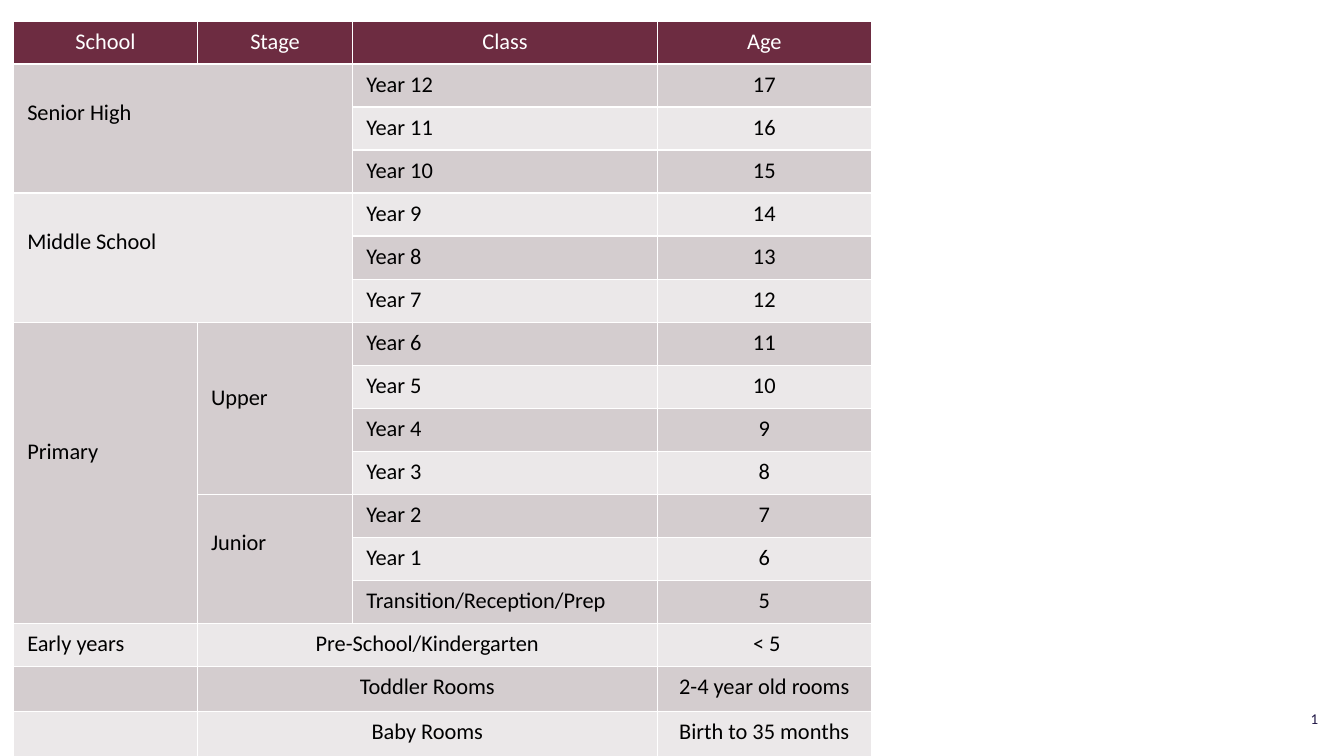
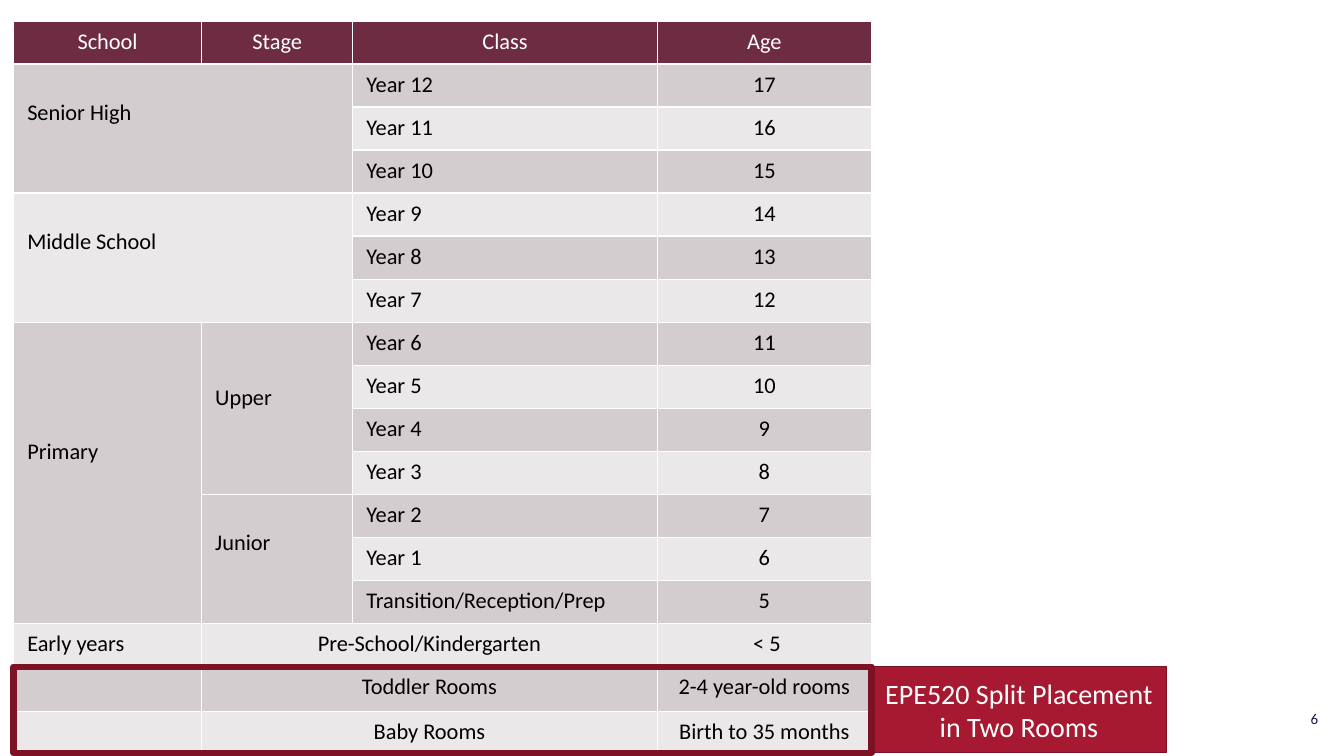
from dataclasses import dataclass

from pptx import Presentation
from pptx import util as u
from pptx.dml.color import RGBColor
from pptx.enum import shapes, text

EMU_PER_PX = 9525
FONT = "Calibri"
WHITE = RGBColor(0xFF, 0xFF, 0xFF)
BLACK = RGBColor(0x00, 0x00, 0x00)
PLUM = RGBColor(0x6D, 0x2C, 0x41)
BAND_DARK = RGBColor(0xD4, 0xCD, 0xCF)
BAND_LIGHT = RGBColor(0xEB, 0xE8, 0xE9)
CRIMSON = RGBColor(0xA7, 0x19, 0x30)
DARK_RED = RGBColor(0x7C, 0x12, 0x24)
NAVY = RGBColor(0x20, 0x16, 0x45)

LEFT, CENTER, RIGHT = text.PP_ALIGN.LEFT, text.PP_ALIGN.CENTER, text.PP_ALIGN.RIGHT

TABLE_X, TABLE_Y = 13, 20
ROW_H = 41
LINE_H = 26
INSET_X, INSET_Y = 13, 7
HEADERS = ("School", "Stage", "Class", "Age")
CLASSES = [f"Year {n}" for n in range(12, 0, -1)] + ["Transition/Reception/Prep"]
OLDEST = 17


@dataclass(frozen=True)
class Group:
    """A label spanning rows and columns, set some text lines below its top."""
    label: str
    row: int
    col: int
    rows: int = 1
    cols: int = 1
    lines_down: int = 0
    align: text.PP_ALIGN = LEFT


@dataclass(frozen=True)
class Page:
    number: str
    school_w: int
    stage_w: int
    toddler_age: str
    callout: str = ""


GROUPS = (
    Group("Senior High", 1, 0, rows=3, cols=2, lines_down=1),
    Group("Middle School", 4, 0, rows=3, cols=2, lines_down=1),
    Group("Primary", 7, 0, rows=7, lines_down=4),
    Group("Upper", 7, 1, rows=4, lines_down=2),
    Group("Junior", 11, 1, rows=3, lines_down=1),
    Group("Early years", 14, 0),
    Group("Pre-School/Kindergarten", 14, 1, cols=2, align=CENTER),
    Group("Toddler Rooms", 15, 1, cols=2, align=CENTER),
    Group("Baby Rooms", 16, 1, cols=2, align=CENTER),
)
PAGES = (
    Page("1", 175, 148, "2-4 year old rooms"),
    Page("6", 179, 144, "2-4 year-old rooms", "EPE520 Split Placement in Two Rooms"),
)
CLASS_W, AGE_W = 290, 204
TABLE_W = PAGES[0].school_w + PAGES[0].stage_w + CLASS_W + AGE_W


def px(n: int) -> u.Emu:
    return u.Emu(n * EMU_PER_PX)


def write(tf, words: str, *, size: float = 16, color: RGBColor = BLACK,
          align: text.PP_ALIGN = LEFT) -> None:
    p = tf.paragraphs[0]
    p.alignment = align
    r = p.add_run()
    r.text = words
    r.font.name, r.font.size, r.font.bold = FONT, u.Pt(size), False
    r.font.color.rgb = color


def set_insets(target, lines_down: int = 0) -> None:
    target.margin_left = target.margin_right = px(INSET_X)
    target.margin_top = px(INSET_Y + lines_down * LINE_H)
    target.margin_bottom = px(INSET_Y)


def add_box(slide, x: int, y: int, w: int, h: int, *, line_pt: float,
            fill: RGBColor | None = None):
    sp = slide.shapes.add_shape(shapes.MSO_SHAPE.RECTANGLE, px(x), px(y), px(w), px(h))
    sp.shadow.inherit = False
    if fill is None:
        sp.fill.background()
    else:
        sp.fill.solid()
        sp.fill.fore_color.rgb = fill
    sp.line.color.rgb, sp.line.width = DARK_RED, u.Pt(line_pt)
    return sp


def add_page_number(slide, number: str) -> None:
    tf = slide.shapes.add_textbox(px(1216), px(665), px(49), px(38)).text_frame
    tf.word_wrap = True
    tf.vertical_anchor = text.MSO_ANCHOR.MIDDLE
    write(tf, number, size=10.7, color=NAVY, align=RIGHT)


def add_school_table(slide, page: Page) -> None:
    ages = [str(OLDEST - i) for i in range(len(CLASSES))]
    ages += [" < 5", page.toddler_age, "Birth to 35 months"]
    n_rows = len(ages) + 1
    widths = (page.school_w, page.stage_w, CLASS_W, AGE_W)
    table = slide.shapes.add_table(n_rows, len(widths), px(TABLE_X), px(TABLE_Y),
                                   px(TABLE_W), px(n_rows * ROW_H)).table
    for column, width in zip(table.columns, widths):
        column.width = px(width)
    for i, row in enumerate(table.rows):
        row.height = px(ROW_H)
        for cell in row.cells:
            set_insets(cell)
            cell.fill.solid()
            cell.fill.fore_color.rgb = PLUM if i == 0 else BAND_DARK if i % 2 else BAND_LIGHT

    for col, header in enumerate(HEADERS):
        write(table.cell(0, col).text_frame, header, color=WHITE, align=CENTER)
    for i, name in enumerate(CLASSES, 1):
        write(table.cell(i, 2).text_frame, name)
    for i, age in enumerate(ages, 1):
        write(table.cell(i, 3).text_frame, age, align=CENTER)
    for g in GROUPS:
        cell = table.cell(g.row, g.col)
        if g.rows * g.cols > 1:
            cell.merge(table.cell(g.row + g.rows - 1, g.col + g.cols - 1))
        set_insets(cell, g.lines_down)
        write(cell.text_frame, g.label, align=g.align)


def add_callout(slide, words: str) -> None:
    """Frame the last two table rows and label them on the right."""
    y, h = TABLE_Y + 15 * ROW_H, 2 * ROW_H
    sp = add_box(slide, TABLE_X + TABLE_W, y, 281, h, line_pt=1, fill=CRIMSON)
    tf = sp.text_frame
    tf.word_wrap = True
    tf.vertical_anchor = text.MSO_ANCHOR.MIDDLE
    set_insets(tf)
    write(tf, words, size=20, color=WHITE, align=CENTER)
    add_box(slide, TABLE_X, y, TABLE_W, h, line_pt=4.5)


def main() -> None:
    prs = Presentation()
    prs.slide_width, prs.slide_height = px(1280), px(720)
    for page in PAGES:
        slide = prs.slides.add_slide(prs.slide_layouts[6])
        add_page_number(slide, page.number)
        add_school_table(slide, page)
        if page.callout:
            add_callout(slide, page.callout)
    prs.save("out.pptx")


if __name__ == "__main__":
    main()
